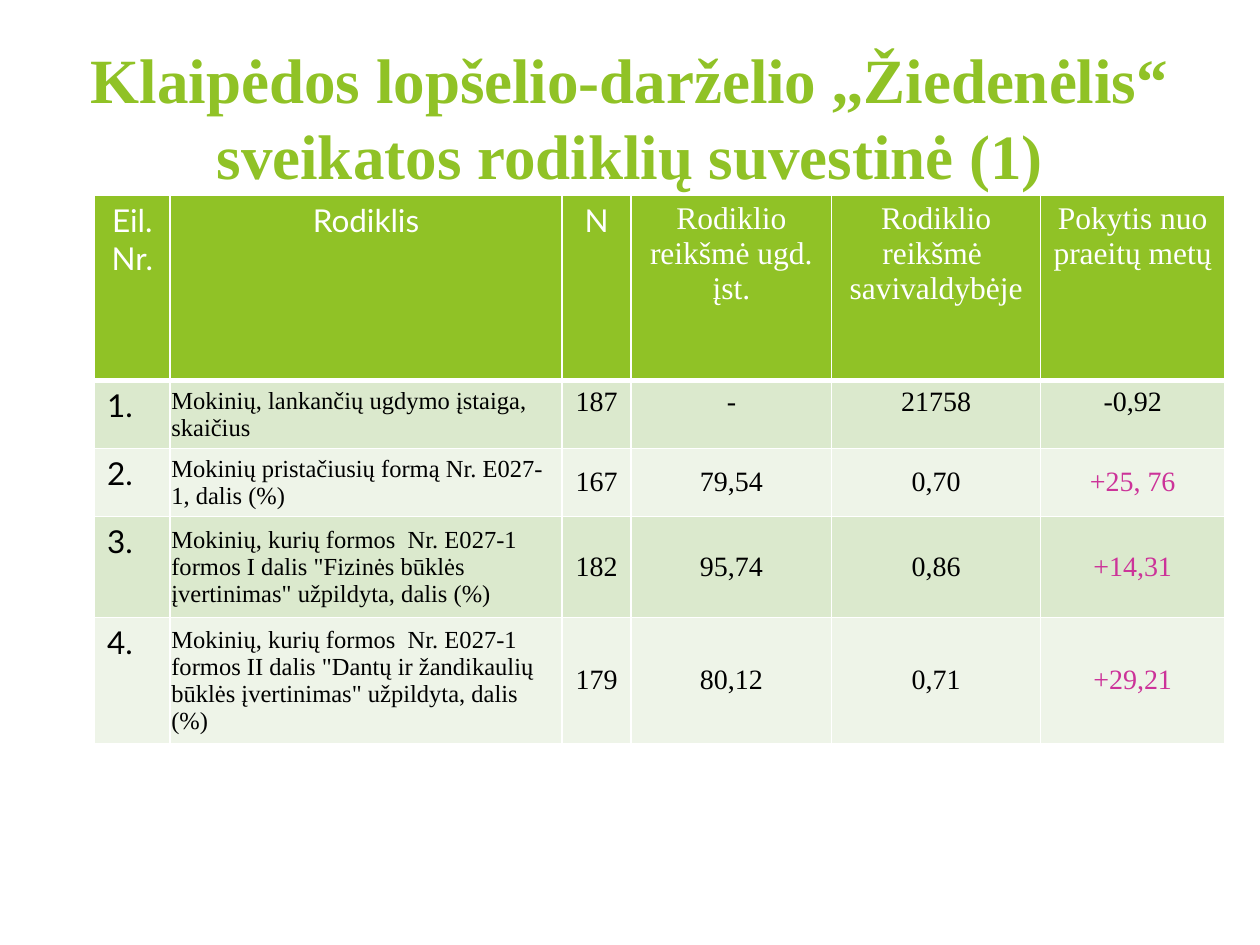
from lxml.etree import SubElement
from pptx import Presentation
from pptx.dml.color import RGBColor
from pptx.enum.text import MSO_ANCHOR, PP_ALIGN
from pptx.oxml.ns import qn
from pptx.util import Inches, Pt

GREEN = RGBColor(0x90, 0xC2, 0x26)
LIGHT = RGBColor(0xDB, 0xE9, 0xCD)
PALE = RGBColor(0xEE, 0xF4, 0xE8)
PINK = RGBColor(0xCC, 0x33, 0x99)
WHITE = RGBColor(0xFF, 0xFF, 0xFF)
BLACK = RGBColor(0, 0, 0)

SERIF = "Times New Roman"
SANS = "Lato"

COL_WIDTHS = [0.6, 3.11, 0.55, 1.59, 1.66, 1.46]
ROW_HEIGHTS = [1.47, 0.54, 0.54, 0.8, 1]
HEADER = ["Eil. Nr.", "Rodiklis", "N", "Rodiklio reikšmė ugd. įst.",
          "Rodiklio reikšmė  savivaldybėje", "Pokytis nuo praeitų metų"]
ROWS = [
    ["1.", "Mokinių, lankančių ugdymo įstaiga, skaičius",
     "187", "-", "21758", "-0,92"],
    ["2.", "Mokinių pristačiusių formą Nr. E027-1, dalis (%)",
     "167", "79,54", "0,70", "+25, 76"],
    ["3.", "Mokinių, kurių formos  Nr. E027-1 formos I dalis \"Fizinės būklės "
     "įvertinimas\" užpildyta, dalis (%)",
     "182", "95,74", "0,86", "+14,31"],
    ["4.", "Mokinių, kurių formos  Nr. E027-1 formos II dalis \"Dantų ir "
     "žandikaulių būklės įvertinimas\" užpildyta, dalis (%)",
     "179", "80,12", "0,71", "+29,21"],
]


class SlideBuilder:
    def __init__(self, slide):
        self.s = slide

    def set_text(self, tf, text, font, size, color, align=PP_ALIGN.CENTER, bold=False):
        p = tf.paragraphs[0]
        p.text = text
        p.alignment = align
        p.font.name = font
        p.font.size = Pt(size)
        p.font.bold = bold
        p.font.color.rgb = color

    def title(self, text, left, top, width, height):
        sp = self.s.shapes.add_textbox(
            Inches(left), Inches(top), Inches(width), Inches(height))
        tf = sp.text_frame
        tf.word_wrap = True
        tf.vertical_anchor = MSO_ANCHOR.MIDDLE
        self.set_text(tf, text, SERIF, 36, GREEN, bold=True)

    def table(self, left, top, widths, heights):
        table = self.s.shapes.add_table(
            len(heights), len(widths), Inches(left), Inches(top),
            Inches(sum(widths)), Inches(sum(heights))).table
        for column, width in zip(table.columns, widths):
            column.width = Inches(width)
        for row, height in zip(table.rows, heights):
            row.height = Inches(height)
        return table

    def borders(self, cell, **widths):
        tc_pr = cell._tc.get_or_add_tcPr()
        for side in "LRTB":
            ln = SubElement(tc_pr, qn(f"a:ln{side}"), w=str(Pt(widths.get(side, 1))))
            fill = SubElement(ln, qn("a:solidFill"))
            SubElement(fill, qn("a:srgbClr"), val=str(WHITE))

    def fill(self, cell, color):
        cell.fill.solid()
        cell.fill.fore_color.rgb = color

    def header_cell(self, cell, text, col):
        self.borders(cell, B=3)
        self.fill(cell, GREEN)
        self.set_text(cell.text_frame, text, SANS if col < 3 else SERIF, 18, WHITE)

    def margins(self, cell, side, bottom):
        cell.vertical_anchor = MSO_ANCHOR.MIDDLE
        cell.margin_left = cell.margin_right = cell.margin_top = Inches(side)
        cell.margin_bottom = Inches(bottom)

    def body_cell(self, cell, text, row, col):
        self.borders(cell, T=3 if row == 1 else 1)
        self.fill(cell, LIGHT if row % 2 else PALE)
        tf = cell.text_frame
        if col == 0:
            self.set_text(tf, text, SANS, 18, BLACK, PP_ALIGN.LEFT)
        elif col == 1:
            self.margins(cell, 0.01, 0)
            self.set_text(tf, text, SERIF, 14, BLACK, PP_ALIGN.LEFT)
        else:
            if row > 1:
                self.margins(cell, 0.03, 0.03)
            self.set_text(tf, text, SERIF, 16, PINK if text.startswith("+") else BLACK)


def main():
    prs = Presentation()
    prs.slide_width, prs.slide_height = Inches(10), Inches(7.5)
    b = SlideBuilder(prs.slides.add_slide(prs.slide_layouts[6]))
    b.title("Klaipėdos lopšelio-darželio ,,Žiedenėlis“ sveikatos rodiklių "
            "suvestinė (1)", 0.5, 0.3, 9, 1.25)
    table = b.table(0.75, 1.55, COL_WIDTHS, ROW_HEIGHTS)
    for col, text in enumerate(HEADER):
        b.header_cell(table.cell(0, col), text, col)
    for row, values in enumerate(ROWS, 1):
        for col, text in enumerate(values):
            b.body_cell(table.cell(row, col), text, row, col)
    prs.save("out.pptx")


if __name__ == "__main__":
    main()
